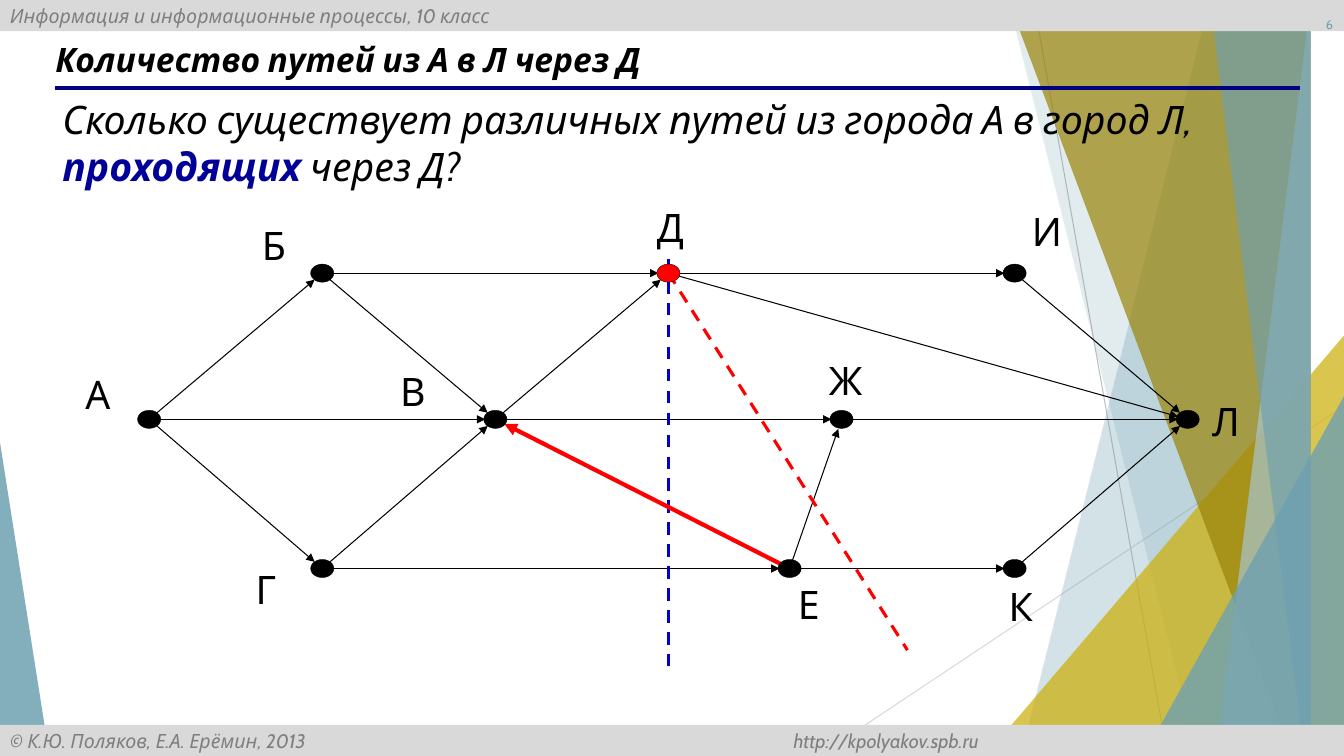
from dataclasses import dataclass
from math import hypot

from lxml import etree
from pptx import Presentation
from pptx.dml.color import RGBColor
from pptx.enum.dml import MSO_LINE
from pptx.enum.shapes import MSO_CONNECTOR, MSO_SHAPE
from pptx.enum.text import MSO_ANCHOR, PP_ALIGN
from pptx.oxml.ns import qn
from pptx.util import Inches, Pt

STRAIGHT = MSO_CONNECTOR.STRAIGHT
RECTANGLE, TRIANGLE, OVAL = MSO_SHAPE.RECTANGLE, MSO_SHAPE.ISOSCELES_TRIANGLE, MSO_SHAPE.OVAL
DASH = MSO_LINE.DASH
TOP, MIDDLE = MSO_ANCHOR.TOP, MSO_ANCHOR.MIDDLE
LEFT, CENTER, RIGHT = PP_ALIGN.LEFT, PP_ALIGN.CENTER, PP_ALIGN.RIGHT


@dataclass(frozen=True)
class Theme:
    font: str = "Cabin"
    black: str = "000000"
    red: str = "FF0000"
    cut_blue: str = "0000CC"
    emphasis: str = "000099"
    rule: str = "000080"
    bar: str = "D9D9D9"
    bar_text: str = "7F7F7F"
    ray: str = "BFBFBF"
    teal: str = "6EA0B0"
    pale_teal: str = "A8C6D0"
    gold: str = "CCAF0A"
    olive: str = "998307"
    title_size: float = 24
    body_size: float = 28
    bar_size: float = 14
    number_size: float = 9


THEME = Theme()

NODE_WIDTH, NODE_HEIGHT, ARROW_GAP = 0.23, 0.18, 0.1
LABEL_WIDTH, LABEL_HEIGHT = 0.78, 0.49
ROWS = (0, 1.45, 2.93)
CITIES = {
    "А": (0, 1, -0.9, -0.49),
    "Б": (1, 0, -0.87, -0.51),
    "В": (2, 1, -1.21, -0.52),
    "Г": (1, 2, -0.95, -0.03),
    "Д": (3, 0, -0.37, -0.69),
    "Е": (3.7, 2, -0.2, 0.12),
    "Ж": (4, 1, -0.35, -0.63),
    "И": (5, 0, -0.07, -0.65),
    "К": (5, 2, -0.33, 0.14),
    "Л": (6, 1, -0.01, -0.22),
}
ROADS = "АБ АВ АГ БВ ГВ БД ВД ВЖ ГЕ ЕЖ ЕК ДИ ДЛ ЖЛ ИЛ КЛ".split()


def paint(shape, color, opacity=100):
    shape.shadow.inherit = False
    shape.fill.solid()
    shape.fill.fore_color.rgb = RGBColor.from_string(color)
    shape.line.fill.background()
    if opacity < 100:
        solid_color = shape.element.spPr.find(".//" + qn("a:srgbClr"))
        etree.SubElement(solid_color, qn("a:alpha"), val=str(opacity * 1000))


def add_line(slide, start, end, color, width, dash=None, arrow=False):
    line = slide.shapes.add_connector(STRAIGHT, *map(Inches, (*start, *end)))
    line.line.color.rgb = RGBColor.from_string(color)
    line.line.width = Pt(width)
    if dash:
        line.line.dash_style = dash
    properties = line.element.spPr
    if arrow:
        etree.SubElement(properties.find(qn("a:ln")), qn("a:tailEnd"), type="triangle")
    etree.SubElement(properties, qn("a:effectLst"))


def style_run(run, size, color, bold=False, italic=False):
    run.font.name = THEME.font
    run.font.size = Pt(size)
    run.font.color.rgb = RGBColor.from_string(color)
    run.font.bold = bold
    run.font.italic = italic


def write(shape, text, size, color, align=LEFT, anchor=MIDDLE, bold=False, italic=False):
    frame = shape.text_frame
    frame.word_wrap = True
    frame.vertical_anchor = anchor
    frame.text = text
    paragraph = frame.paragraphs[0]
    paragraph.alignment = align
    style_run(paragraph.runs[0], size, color, bold, italic)
    return paragraph


def add_text(slide, box, text, size, color, **options):
    shape = slide.shapes.add_textbox(*map(Inches, box))
    return shape, write(shape, text, size, color, **options)


def add_facet(slide, box, top_x, bottom_x, color, opacity):
    left, top, width, height = box
    builder = slide.shapes.build_freeform(left + top_x, top, scale=Inches(1))
    builder.add_line_segments([
        (left + width, top), (left + width, top + height), (left + bottom_x, top + height),
    ])
    paint(builder.convert_to_shape(), color, opacity)


def add_corner(slide, box, x, width, height, apex, color, opacity):
    left, top, _, box_height = box
    place = (left + x, top + box_height - height, width, height)
    corner = slide.shapes.add_shape(TRIANGLE, *map(Inches, place))
    corner.adjustments[0] = apex
    paint(corner, color, opacity)


def add_backdrop(slide, box):
    left, top, width, height = box
    bottom = top + height
    add_line(slide, (left + 10.25, top), (left + 11.58, bottom), THEME.ray, 0.75)
    add_line(slide, (left + width, top + 4.03), (left + 8.12, bottom), THEME.bar, 0.75)
    add_facet(slide, box, 12.28, 10.04, THEME.teal, 30)
    add_facet(slide, box, 10.5, 11.83, THEME.teal, 20)
    add_corner(slide, box, 9.77, 3.56, 4.17, 1, THEME.gold, 72)
    add_facet(slide, box, 10.21, 12.91, THEME.olive, 70)
    add_facet(slide, box, 13.03, 11.92, THEME.pale_teal, 70)
    add_facet(slide, box, 11.96, 13.18, THEME.teal, 65)
    add_corner(slide, box, 11.34, 1.99, 3.57, 1, THEME.teal, 80)
    add_corner(slide, box, 0, 0.49, 3.11, 0, THEME.teal, 85)


def add_bar(slide, box, text, tab=None):
    bar = slide.shapes.add_shape(RECTANGLE, *map(Inches, box))
    paint(bar, THEME.bar)
    paragraph = write(bar, text, THEME.bar_size, THEME.bar_text, italic=True)
    if tab:
        tabs = etree.SubElement(paragraph._p.get_or_add_pPr(), qn("a:tabLst"))
        etree.SubElement(tabs, qn("a:tab"), pos=str(Inches(tab)), algn="r")


def add_heading(slide, box):
    left, top, width, height = box
    add_text(slide, box, "Количество путей из А в Л через Д",
             THEME.title_size, THEME.black, bold=True, italic=True)
    rule_y = top + height + 0.02
    add_line(slide, (left + 0.1, rule_y), (left + width + 0.23, rule_y), THEME.rule, 3)


def add_question(slide, box):
    _, paragraph = add_text(slide, box, "Сколько существует различных путей из города А в город Л, ",
                            THEME.body_size, THEME.black, italic=True)
    for text, color, bold in (("проходящих", THEME.emphasis, True),
                              (" через Д?", THEME.black, False)):
        run = paragraph.add_run()
        run.text = text
        style_run(run, THEME.body_size, color, bold, italic=True)


def add_road(slide, start, end, color, width):
    run_x, run_y = end[0] - start[0], end[1] - start[1]
    share = 1 - ARROW_GAP / hypot(run_x, run_y)
    tip = (start[0] + run_x * share, start[1] + run_y * share)
    add_line(slide, start, tip, color, width, arrow=True)


def add_road_map(slide, box):
    left, top, width, _ = box
    centers = {
        city: (left + column * width / 6, top + ROWS[row])
        for city, (column, row, _, _) in CITIES.items()
    }
    for origin, target in ROADS:
        add_road(slide, centers[origin], centers[target], THEME.black, 0.75)
    cut_x, cut_y = centers["Д"]
    add_line(slide, (cut_x, cut_y - 0.14), (cut_x, cut_y + 3.9), THEME.cut_blue, 2.25, DASH)
    add_road(slide, centers["Е"], centers["В"], THEME.red, 3)
    add_line(slide, (cut_x, cut_y), (cut_x + 2.37, cut_y + 3.74), THEME.red, 2.25, DASH)
    for city, (x, y) in centers.items():
        place = (x - NODE_WIDTH / 2, y - NODE_HEIGHT / 2, NODE_WIDTH, NODE_HEIGHT)
        node = slide.shapes.add_shape(OVAL, *map(Inches, place))
        paint(node, THEME.red if city == "Д" else THEME.black)
        node.line.color.rgb = RGBColor.from_string(THEME.black)
        node.line.width = Pt(0.25)
        _, _, shift_x, shift_y = CITIES[city]
        label, _ = add_text(slide, (x + shift_x, y + shift_y, LABEL_WIDTH, LABEL_HEIGHT), city,
                            THEME.body_size, THEME.black, align=CENTER, anchor=TOP)
        frame = label.text_frame
        frame.margin_left = frame.margin_right = frame.margin_top = frame.margin_bottom = 0


def main():
    presentation = Presentation()
    presentation.slide_width, presentation.slide_height = Inches(13.33), Inches(7.5)
    slide = presentation.slides.add_slide(presentation.slide_layouts[6])
    add_backdrop(slide, (0, 0, 13.33, 7.5))
    add_bar(slide, (0, 0, 13.33, 0.31), "Информация и информационные процессы, 10 класс")
    add_bar(slide, (0, 7.19, 13.33, 0.31),
            "© К.Ю. Поляков, Е.А. Ерёмин, 2013 \thttp://kpolyakov.spb.ru", tab=9.61)
    add_heading(slide, (0.45, 0.33, 12.21, 0.52))
    add_text(slide, (10.21, -0.02, 3.11, 0.52), "6", THEME.number_size, THEME.teal, align=RIGHT)
    add_question(slide, (0.52, 0.89, 12.37, 1.04))
    add_road_map(slide, (1.48, 2.71, 10.3, 2.93))
    presentation.save("out.pptx")


if __name__ == "__main__":
    main()
